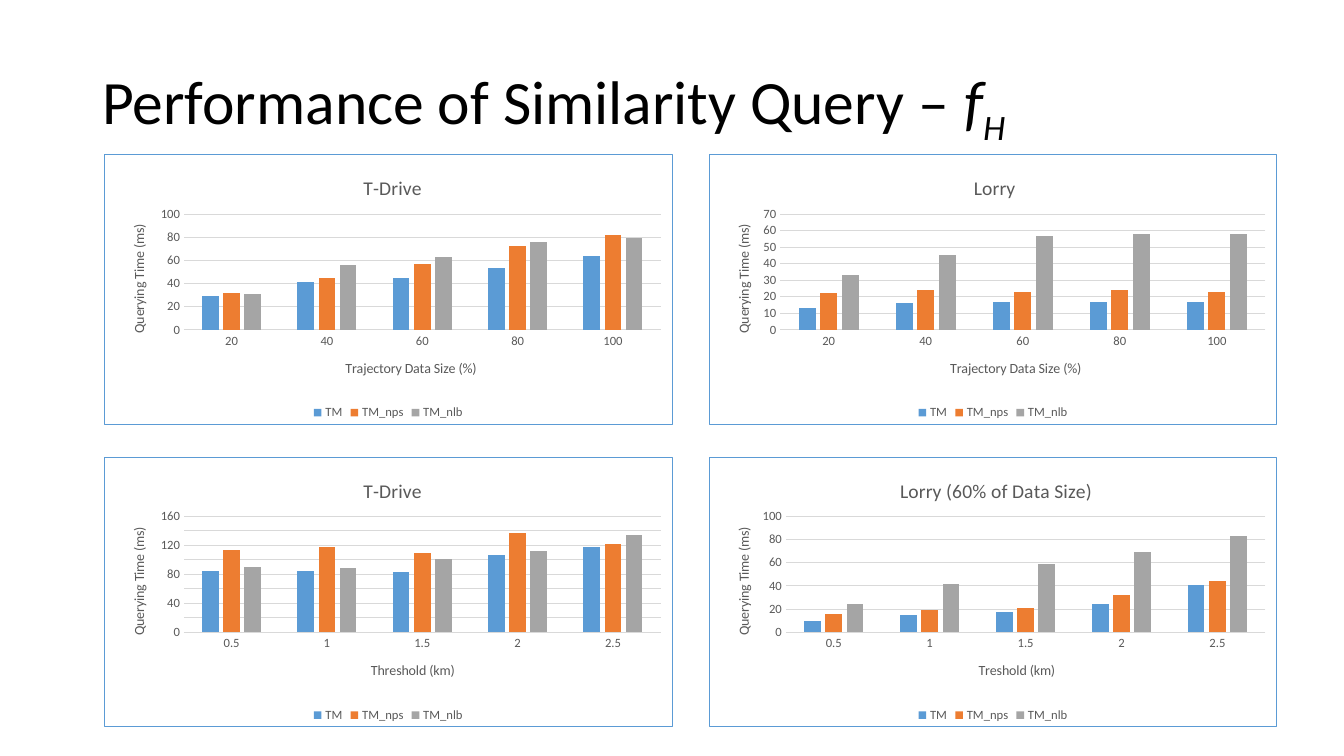
"""Build a slide comparing similarity query times in four clustered column charts."""
from dataclasses import dataclass

from lxml import etree
from pptx import Presentation
from pptx.chart.data import CategoryChartData
from pptx.dml.color import RGBColor
from pptx.enum.chart import XL_CHART_TYPE, XL_LEGEND_POSITION, XL_TICK_MARK
from pptx.enum.text import MSO_ANCHOR
from pptx.oxml import parse_xml
from pptx.oxml.ns import nsdecls, qn
from pptx.util import Cm, Pt

COLUMNS = XL_CHART_TYPE.COLUMN_CLUSTERED
BOTTOM = XL_LEGEND_POSITION.BOTTOM
NO_TICKS = XL_TICK_MARK.NONE
MIDDLE = MSO_ANCHOR.MIDDLE

FONT = "Calibri"
COLORS = {
    "text": "000000",
    "label": "595959",
    "grid": "D9D9D9",
    "border": "5B9BD5",
    "TM": "5B9BD5",
    "TM_nps": "ED7D31",
    "TM_nlb": "A5A5A5",
}
SERIES_NAMES = ("TM", "TM_nps", "TM_nlb")
DATA_SIZES = ("20", "40", "60", "80", "100")
THRESHOLDS = ("0.5", "1", "1.5", "2", "2.5")
CHART_LEFT, CHART_TOP = 2.62, 3.89
CHART_WIDTH, CHART_HEIGHT = 14.33, 6.81
COLUMN_STEP, ROW_STEP = 15.24, 7.62


@dataclass(frozen=True)
class QueryChart:
    """Content and plot placement of one chart."""

    title: str
    title_left: float
    axis_title: str
    axis_title_left: float
    plot_left: float
    maximum: int
    unit: int
    categories: tuple[str, ...]
    values: tuple[tuple[int, ...], ...]


QUERY_CHARTS = (
    QueryChart("T-Drive", 0.45, "Trajectory Data Size (%)", 0.42, 0.14, 100, 20, DATA_SIZES,
               ((29, 41, 45, 53, 64), (32, 45, 57, 72, 82), (31, 56, 63, 76, 79))),
    QueryChart("Lorry", 0.46, "Trajectory Data Size (%)", 0.42, 0.125, 70, 10, DATA_SIZES,
               ((13, 16, 17, 17, 17), (22, 24, 23, 24, 23), (33, 45, 57, 58, 58))),
    QueryChart("T-Drive", 0.45, "Threshold (km)", 0.465, 0.14, 160, 20, THRESHOLDS,
               ((84, 85, 83, 107, 118), (114, 118, 110, 137, 122), (90, 89, 101, 112, 134))),
    QueryChart("Lorry (60% of Data Size)", 0.33, "Treshold (km)", 0.47, 0.135, 100, 20, THRESHOLDS,
               ((10, 15, 17, 24, 41), (16, 19, 21, 32, 44), (24, 42, 59, 69, 83))),
)


def color(name: str) -> RGBColor:
    """Return the named palette colour."""
    return RGBColor.from_string(COLORS[name])


def style_font(font, size: float, color_name: str) -> None:
    """Apply the slide's typeface with a size and colour."""
    font.name, font.size, font.bold = FONT, Pt(size), False
    font.color.rgb = color(color_name)


def style_line(line, color_name: str) -> None:
    """Draw a thin line in a palette colour."""
    line.color.rgb = color(color_name)
    line.width = Pt(0.75)


def place(element, index: int, **settings) -> None:
    """Give a chart element a manual layout."""
    for old_layout in element.findall(qn("c:layout")):
        element.remove(old_layout)
    layout = parse_xml(f"<c:layout {nsdecls('c')}><c:manualLayout/></c:layout>")
    for name, value in settings.items():
        etree.SubElement(layout[0], qn(f"c:{name}")).set("val", str(value))
    element.insert(index, layout)


def add_chart_title(owner, text: str, size: float, left: float, top: float) -> None:
    """Write and place the title of a chart or an axis."""
    owner.has_title = True
    title = owner.chart_title if hasattr(owner, "chart_title") else owner.axis_title
    title.text_frame.text = text
    style_font(title.text_frame.paragraphs[0].font, size, "label")
    place(title._element, 1, xMode="edge", yMode="edge", x=left, y=top)


def add_query_chart(slide, query_chart: QueryChart, left: float, top: float) -> None:
    """Add one framed column chart."""
    data = CategoryChartData()
    data.categories = query_chart.categories
    for name, values in zip(SERIES_NAMES, query_chart.values):
        data.add_series(name, values)
    chart = slide.shapes.add_chart(
        COLUMNS, Cm(left), Cm(top), Cm(CHART_WIDTH), Cm(CHART_HEIGHT), data).chart
    style_font(chart.font, 10, "text")
    add_chart_title(chart, query_chart.title, 14, query_chart.title_left, 0.06)

    plot = chart.plots[0]
    plot.gap_width, plot.overlap, plot.vary_by_categories = 219, -27, False
    for series in plot.series:
        series.format.fill.solid()
        series.format.fill.fore_color.rgb = color(series.name)

    category_axis, value_axis = chart.category_axis, chart.value_axis
    for axis in (category_axis, value_axis):
        axis.major_tick_mark = axis.minor_tick_mark = NO_TICKS
        style_font(axis.tick_labels.font, 9, "label")
    add_chart_title(category_axis, query_chart.axis_title, 10, query_chart.axis_title_left, 0.75)
    add_chart_title(value_axis, "Querying Time (ms)", 10, 0.04, 0.25)
    style_line(category_axis.format.line, "grid")
    value_axis.format.line.fill.background()
    style_line(value_axis.major_gridlines.format.line, "grid")
    value_axis.minimum_scale, value_axis.maximum_scale = 0, query_chart.maximum
    value_axis.major_unit = query_chart.unit

    chart.has_legend = True
    chart.legend.position = BOTTOM
    chart.legend.include_in_layout = False
    style_font(chart.legend.font, 9, "label")

    plot_area = chart._chartSpace.chart.plotArea
    place(plot_area, 0, layoutTarget="inner", xMode="edge", yMode="edge",
          x=query_chart.plot_left, y=0.22, w=round(0.98 - query_chart.plot_left, 3), h=0.43)
    frame = parse_xml(
        f"<c:spPr {nsdecls('c', 'a')}><a:noFill/><a:ln w=\"{Pt(0.75)}\"><a:solidFill>"
        f"<a:srgbClr val=\"{COLORS['border']}\"/></a:solidFill></a:ln></c:spPr>")
    chart._chartSpace.chart.addnext(frame)


def add_heading(slide) -> None:
    """Add the slide title with its italic symbol and subscript."""
    box = slide.shapes.add_textbox(Cm(2.33), Cm(1.01), Cm(29.21), Cm(3.13))
    frame = box.text_frame
    frame.word_wrap = True
    frame.vertical_anchor = MIDDLE
    paragraph = frame.paragraphs[0]
    paragraph.line_spacing = 0.9
    style_font(paragraph.font, 44, "text")
    paragraph.add_run().text = "Performance of Similarity Query – "
    for symbol in ("f", "H"):
        run = paragraph.add_run()
        run.text = symbol
        run.font.italic = True
    run.font._element.set("baseline", "-25000")


def main() -> None:
    """Build and save the presentation."""
    presentation = Presentation()
    presentation.slide_width, presentation.slide_height = Cm(33.87), Cm(19.05)
    slide = presentation.slides.add_slide(presentation.slide_layouts[6])
    add_heading(slide)
    for index, query_chart in enumerate(QUERY_CHARTS):
        row, column = divmod(index, 2)
        add_query_chart(slide, query_chart,
                        CHART_LEFT + column * COLUMN_STEP, CHART_TOP + row * ROW_STEP)
    presentation.save("out.pptx")


if __name__ == "__main__":
    main()
